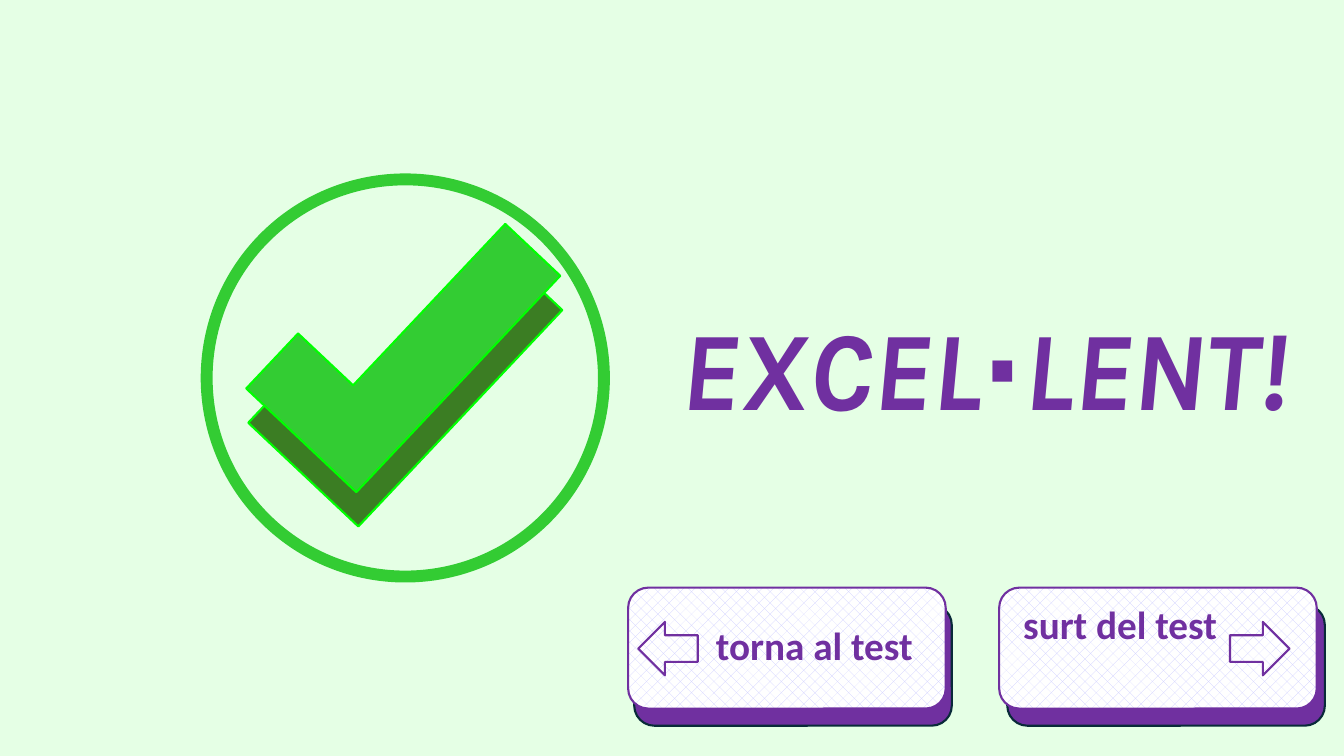
from pptx import Presentation
from pptx.dml.color import RGBColor
from pptx.enum.dml import MSO_PATTERN
from pptx.enum.shapes import MSO_SHAPE as SHAPE
from pptx.enum.text import MSO_ANCHOR, MSO_AUTO_SIZE, PP_ALIGN
from pptx.util import Inches, Pt

COLORS = {
    "background": "E5FFE5",
    "purple": "7030A0",
    "navy": "092A39",
    "green": "33CC33",
    "dark_green": "3B7D23",
    "lime": "00FF00",
    "lavender": "CCCCFF",
    "white": "FFFFFF",
}


def rgb(name):
    return RGBColor.from_string(COLORS[name])


def add_shape(kind, box, line, fill=None, width=1.5, flip=False):
    """Add a preset shape; box is left, top, width, height in inches."""
    sp = s.shapes.add_shape(kind, *map(Inches, box))
    sp.shadow.inherit = False
    if fill:
        sp.fill.solid()
        sp.fill.fore_color.rgb = rgb(fill)
    else:
        sp.fill.background()
    sp.line.color.rgb = rgb(line)
    sp.line.width = Pt(width)
    if flip:
        sp._element.spPr.xfrm.set("flipH", "1")
    return sp


prs = Presentation()
prs.slide_width, prs.slide_height = Inches(13.33), Inches(7.5)
s = prs.slides.add_slide(prs.slide_layouts[5])
s.background.fill.solid()
s.background.fill.fore_color.rgb = rgb("background")

# Heading
title = s.shapes.title
title.left, title.top = Inches(6.2), Inches(2.91)
title.width, title.height = Inches(7.12), Inches(1.45)
tf = title.text_frame
tf.word_wrap = False
tf.auto_size = MSO_AUTO_SIZE.SHAPE_TO_FIT_TEXT
tf.vertical_anchor = MSO_ANCHOR.TOP
p = tf.paragraphs[0]
p.alignment = PP_ALIGN.CENTER
for text, font in [("EXCEL", "Karla"), ("∙", "Comic Neue"), ("LENT!", "Karla")]:
    r = p.add_run()
    r.text = text
    r.font.name = font
    r.font.size = Pt(80)
    r.font.bold = r.font.italic = True
    r.font.color.rgb = rgb("purple")

# Tick inside a ring, with a darker tick behind it
for left, top, fill in [(3.27, 2.16, "dark_green"), (3.25, 1.82, "green")]:
    tick = add_shape(SHAPE.CORNER, (left, top, 1.5, 2.95), "lime", fill, flip=True)
    tick.rotation = 43.3
add_shape(SHAPE.FLOWCHART_CONNECTOR, (2.05, 1.78, 3.94, 3.94), "green", width=8.5)

# Buttons: text, left, base left, arrow left, arrow flipped, alignment, margins
buttons = [
    ("torna al test", 6.23, 6.29, 6.33, False, PP_ALIGN.CENTER, 0.64, 0.05),
    ("surt del test", 9.91, 9.99, 12.2, True, PP_ALIGN.LEFT, 0.18, 0.47),
]
for text, left, base_left, arrow_left, flip, align, margin_left, margin_bottom in buttons:
    add_shape(SHAPE.ROUNDED_RECTANGLE, (base_left, 6, 3.15, 1.2), "navy", "purple")
    button = add_shape(SHAPE.ROUNDED_RECTANGLE, (left, 5.83, 3.15, 1.2), "purple")
    button.fill.patterned()
    button.fill.pattern = MSO_PATTERN.PERCENT_25
    button.fill.fore_color.rgb = rgb("lavender")
    button.fill.back_color.rgb = rgb("white")
    tf = button.text_frame
    tf.word_wrap = True
    tf.vertical_anchor = MSO_ANCHOR.MIDDLE
    tf.margin_left, tf.margin_bottom = Inches(margin_left), Inches(margin_bottom)
    p = tf.paragraphs[0]
    p.text = text
    p.alignment = align
    p.line_spacing = 0.9
    p.font.name = "Calibri"
    p.font.size = Pt(28)
    p.font.bold = True
    p.font.color.rgb = rgb("purple")
    add_shape(SHAPE.LEFT_ARROW, (arrow_left, 6.17, 0.59, 0.53), "purple", flip=flip)

prs.save("out.pptx")
